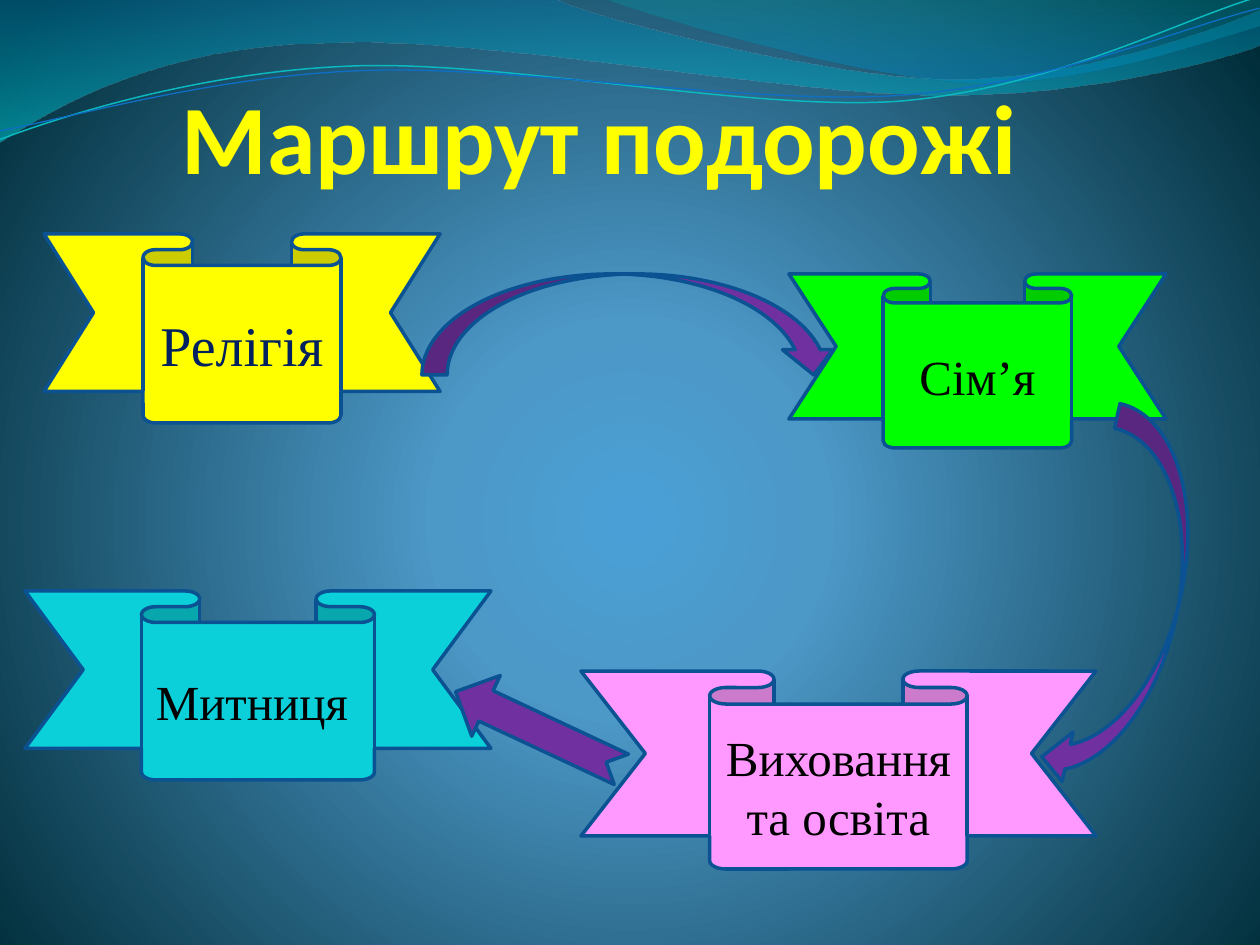
from dataclasses import dataclass

from lxml import etree
from pptx import Presentation
from pptx import util as u
from pptx.dml.color import RGBColor
from pptx.enum import shapes, text
from pptx.oxml.ns import qn

SCALE = 914400 / 126
SHAPE = shapes.MSO_SHAPE


@dataclass(frozen=True)
class Theme:
    title_font: str = "Calibri"
    label_font: str = "Times New Roman"
    title_size: int = 56
    large_label: int = 32
    label: int = 28
    yellow: str = "FFFF00"
    cyan: str = "0BD0D9"
    green: str = "00FF00"
    pink: str = "FF99FF"
    purple: str = "7030A0"
    outline: str = "0B5292"
    navy: str = "002060"
    black: str = "000000"
    # Gradient stops: position, colour, opacity (positions and opacity in percent)
    backdrop: tuple = ((0, "4AA0D6", 100), (25, "4C98C7", 100), (100, "002C38", 100))
    wide_wave: tuple = ((0, "0074A1", 45), (100, "00C6CF", 55))
    right_wave: tuple = ((0, "00A1A9", 30), (80, "008BBF", 45))
    teal_line: str = "0AB8BF"
    blue_line: str = "0F6FC6"


T = Theme()


def px(n):
    return u.Emu(round(n * SCALE))


def rgb(value):
    return RGBColor.from_string(value)


def set_gradient(parent, stops, centre=None):
    """Swap the solid fill of parent for a vertical or, given a centre, circular gradient."""
    grad = etree.Element(qn("a:gradFill"), rotWithShape="1")
    stop_list = etree.SubElement(grad, qn("a:gsLst"))
    for pos, color, opacity in stops:
        stop = etree.SubElement(stop_list, qn("a:gs"), pos=str(pos * 1000))
        clr = etree.SubElement(stop, qn("a:srgbClr"), val=color)
        if opacity < 100:
            etree.SubElement(clr, qn("a:alpha"), val=str(opacity * 1000))
    if centre:
        circle = etree.SubElement(grad, qn("a:path"), path="circle")
        sides = {side: str(n * 1000) for side, n in zip("ltrb", centre)}
        etree.SubElement(circle, qn("a:fillToRect"), **sides)
    else:
        etree.SubElement(grad, qn("a:lin"), ang="5400000", scaled="0")
    parent.replace(parent.find(qn("a:solidFill")), grad)


def set_background(slide):
    fill = slide.background.fill
    fill.solid()
    fill.fore_color.rgb = rgb(T.black)
    bg = slide.element.find(".//" + qn("p:bgPr"))
    set_gradient(bg, T.backdrop, centre=(10, 110, 10, 100))


def add_wave(parent, start, segments, closed):
    """Draw segments of one point as lines and of three points as Bezier curves."""
    builder = parent.shapes.build_freeform(*start, scale=SCALE)
    builder.add_line_segments([pt for seg in segments for pt in seg], close=closed)
    sp = builder.convert_to_shape()
    sp.shadow.inherit = False
    lines = iter(sp.element.findall(".//" + qn("a:lnTo")))
    for seg in segments:
        first, *rest = [next(lines) for _ in seg]
        if rest:
            first.tag = qn("a:cubicBezTo")
        for line in rest:
            first.append(line[0])
            line.getparent().remove(line)
    return sp


def add_wave_band(slide, stops, start, *segments):
    sp = add_wave(slide, start, segments, True)
    sp.fill.solid()
    set_gradient(sp.element.spPr, stops)
    sp.line.fill.background()


def add_wave_line(group, color, width, start, *segments):
    sp = add_wave(group, start, segments, False)
    sp.fill.background()
    sp.line.color.rgb = rgb(color)
    sp.line.width = u.Pt(width)
    sp.rotation = 357.3


def add_waves(slide):
    add_wave_band(slide, T.wide_wave, (0, 0), [(554, -1)],
                  [(600, 21), (837, 79), (955, 79)],
                  [(1075, 79), (1207, 33), (1260, 11)], [(1261, 45)],
                  [(1239, 55), (1096, 96), (940, 95)],
                  [(784, 95), (481, 35), (324, 43)],
                  [(163, 45), (58, 105), (-1, 142)])
    add_wave_band(slide, T.right_wave, (604, -1),
                  [(641, 14), (859, 78), (969, 82)],
                  [(1079, 87), (1211, 40), (1260, 26)], [(1260, 0)])
    group = slide.shapes.add_group_shape()
    add_wave_line(group, T.teal_line, 0.85, (-3, 110),
                  [(58, 90), (199, 52), (349, 53)],
                  [(499, 53), (745, 117), (896, 114)],
                  [(1049, 109), (1184, 45), (1260, 27)])
    add_wave_line(group, T.blue_line, 0.75, (-2, 101),
                  [(57, 94), (207, 57), (357, 58)],
                  [(509, 58), (750, 112), (902, 108)],
                  [(1052, 104), (1188, 52), (1262, 38)])


def write(tf, words, font, size, color, bold=False):
    p = tf.paragraphs[0]
    p.alignment = text.PP_ALIGN.CENTER
    r = p.add_run()
    r.text = words
    r.font.name = font
    r.font.size = u.Pt(size)
    r.font.bold = bold
    r.font.color.rgb = rgb(color)


def add_title(slide, words):
    sp = slide.shapes.title
    sp.left, sp.top, sp.width, sp.height = map(px, (64, 36, 1071, 158))
    tf = sp.text_frame
    tf.auto_size = text.MSO_AUTO_SIZE.NONE
    tf.vertical_anchor = text.MSO_ANCHOR.BOTTOM
    tf.margin_left = tf.margin_top = tf.margin_right = tf.margin_bottom = 0
    write(tf, words, T.title_font, T.title_size, T.yellow, bold=True)
    slide.shapes.element.append(sp.element)  # in front of the waves


def add_outlined(slide, kind, box, color):
    sp = slide.shapes.add_shape(kind, *map(px, box))
    sp.shadow.inherit = False
    sp.fill.solid()
    sp.fill.fore_color.rgb = rgb(color)
    sp.line.color.rgb = rgb(T.outline)
    sp.line.width = u.Pt(2)
    return sp


def add_ribbon(slide, words, box, color, size=T.label, ink=T.black):
    tf = add_outlined(slide, SHAPE.DOWN_RIBBON, box, color).text_frame
    tf.word_wrap = True
    tf.vertical_anchor = text.MSO_ANCHOR.MIDDLE
    write(tf, words, T.label_font, size, ink)


def add_arrow(slide, kind, box, rotation=0):
    add_outlined(slide, kind, box, T.purple).rotation = rotation


def main():
    prs = Presentation()
    prs.slide_width, prs.slide_height = px(1260), px(945)
    slide = prs.slides.add_slide(prs.slide_layouts[5])
    set_background(slide)
    add_waves(slide)
    add_title(slide, "Маршрут подорожі")
    add_ribbon(slide, "Релігія", (44, 234, 396, 189), T.yellow, T.large_label, T.navy)
    add_ribbon(slide, "Митниця ", (25, 591, 466, 189), T.cyan)
    add_ribbon(slide, "Сім’я", (789, 274, 377, 174), T.green)
    add_ribbon(slide, "Виховання та освіта", (581, 671, 515, 198), T.pink)
    add_arrow(slide, SHAPE.CURVED_DOWN_ARROW, (422, 274, 417, 101))
    add_arrow(slide, SHAPE.CURVED_LEFT_ARROW, (1077, 410, 101, 387), 12.5)
    add_arrow(slide, SHAPE.NOTCHED_RIGHT_ARROW, (447, 697, 183, 67), 205.1)
    prs.save("out.pptx")


if __name__ == "__main__":
    main()
